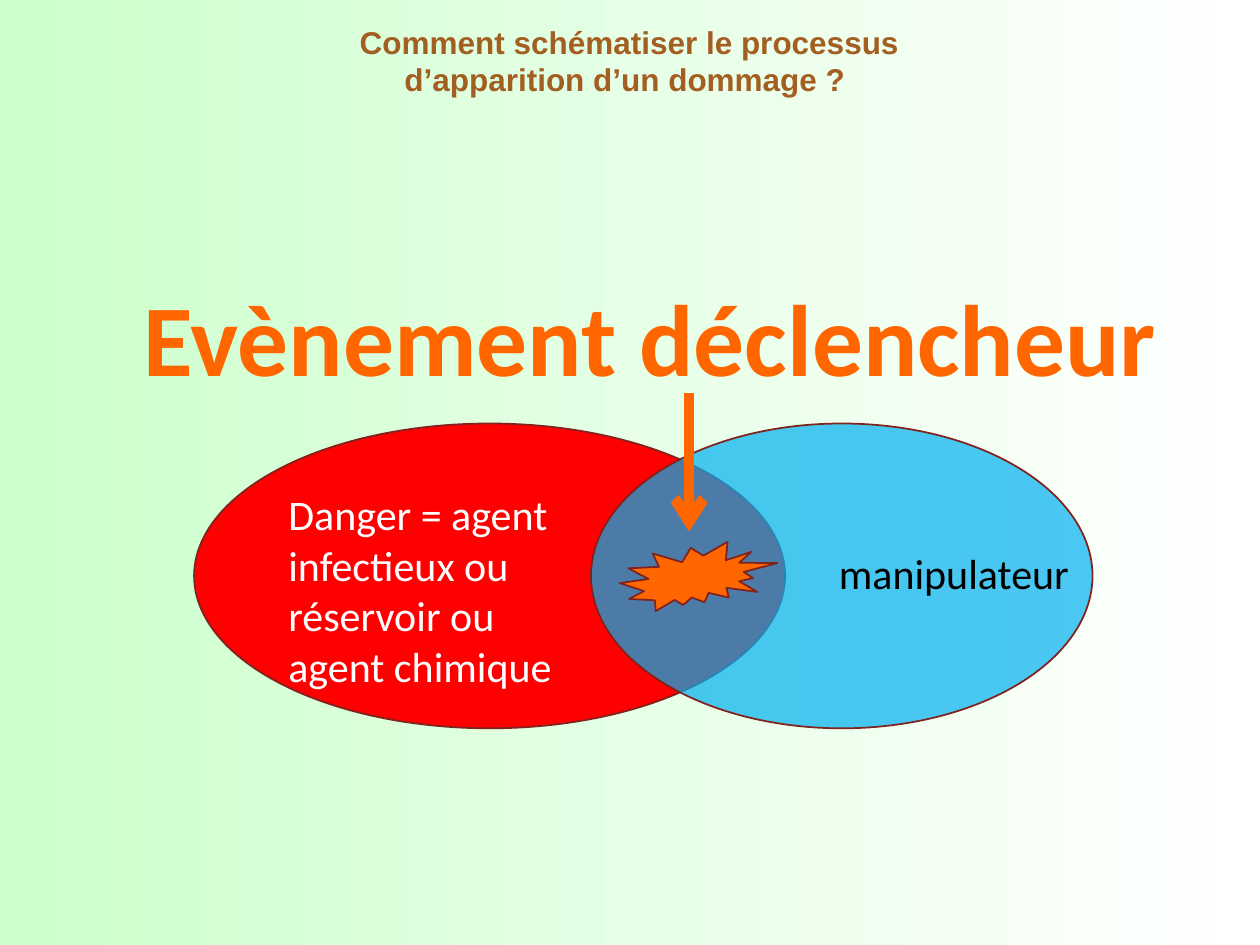
from dataclasses import dataclass

from lxml.etree import SubElement
from pptx import Presentation
from pptx.dml.color import RGBColor
from pptx.enum.shapes import MSO_CONNECTOR, MSO_SHAPE
from pptx.enum.text import MSO_ANCHOR, PP_ALIGN
from pptx.oxml.ns import qn
from pptx.util import Pt

COLORS = {
    "mint": "CCFFCC",
    "white": "FFFFFF",
    "black": "000000",
    "red": "FF0000",
    "blue": "00B0F0",
    "orange": "FF6600",
    "outline": "80221D",
    "brown": "A35E21",
}


@dataclass
class Figure:
    preset: MSO_SHAPE
    left: float
    top: float
    width: float
    height: float
    color: str
    opacity: int = 100


@dataclass
class Label:
    text: str
    left: float
    top: float
    width: float
    height: float
    size: float
    color: str
    font: str = "Calibri"
    bold: bool = False
    align: PP_ALIGN = PP_ALIGN.LEFT
    anchor: MSO_ANCHOR = MSO_ANCHOR.TOP


def rgb(name: str) -> RGBColor:
    return RGBColor.from_string(COLORS[name])


def paint_background(page) -> None:
    fill = page.background.fill
    fill.gradient()
    fill.gradient_angle = 0
    for stop, name, position in zip(fill.gradient_stops, ("mint", "white"), (0, 1)):
        stop.color.rgb = rgb(name)
        stop.position = position


def draw_figure(page, figure: Figure) -> None:
    shape = page.shapes.add_shape(
        figure.preset, Pt(figure.left), Pt(figure.top), Pt(figure.width), Pt(figure.height)
    )
    shape.shadow.inherit = False
    shape.fill.solid()
    shape.fill.fore_color.rgb = rgb(figure.color)
    shape.line.color.rgb = rgb("outline")
    shape.line.width = Pt(1)
    if figure.opacity < 100:
        color = shape.fill._xPr.find(qn("a:solidFill"))[0]
        SubElement(color, qn("a:alpha"), val=str(figure.opacity * 1000))


def draw_label(page, label: Label) -> None:
    box = page.shapes.add_textbox(
        Pt(label.left), Pt(label.top), Pt(label.width), Pt(label.height)
    )
    frame = box.text_frame
    frame.word_wrap = True
    frame.vertical_anchor = label.anchor
    para = frame.paragraphs[0]
    para.alignment = label.align
    span = para.add_run()
    span.text = label.text
    span.font.name = label.font
    span.font.size = Pt(label.size)
    span.font.bold = label.bold
    span.font.color.rgb = rgb(label.color)


def draw_down_arrow(page, x: float, top: float, bottom: float) -> None:
    arrow = page.shapes.add_connector(
        MSO_CONNECTOR.STRAIGHT, Pt(x), Pt(top), Pt(x), Pt(bottom)
    )
    arrow.line.color.rgb = rgb("orange")
    arrow.line.width = Pt(6)
    SubElement(arrow.line._get_or_add_ln(), qn("a:tailEnd"), type="arrow")
    SubElement(arrow._element.spPr, qn("a:effectLst"))


DANGER = Figure(MSO_SHAPE.OVAL, 110.9, 242, 337.7, 174.2, "red")
HANDLER = Figure(MSO_SHAPE.OVAL, 337.7, 242, 286.6, 174.2, "blue", opacity=70)
BURST = Figure(MSO_SHAPE.EXPLOSION2, 354.2, 309.6, 90, 39.6, "orange")

EVENT_TEXT = Label(
    "Evènement déclencheur", 65.5, 90, 612, 140.4, 58, "orange",
    bold=True, align=PP_ALIGN.CENTER, anchor=MSO_ANCHOR.BOTTOM,
)
DANGER_TEXT = Label(
    "Danger = agent infectieux ou réservoir ou agent chimique",
    157.7, 275.8, 185.8, 123.8, 24, "white",
)
HANDLER_TEXT = Label("manipulateur", 472.3, 309.6, 154.1, 36, 24, "black")
QUESTION_TEXT = Label(
    "Comment schématiser le processus d’apparition d’un dommage ? ",
    167, 9.4, 385.2, 51.1, 18, "brown",
    font="Arial", bold=True, align=PP_ALIGN.CENTER,
)


def main() -> None:
    deck = Presentation()
    deck.slide_width, deck.slide_height = Pt(720), Pt(540)
    page = deck.slides.add_slide(deck.slide_layouts[6])
    paint_background(page)
    draw_figure(page, DANGER)
    draw_label(page, EVENT_TEXT)
    draw_label(page, DANGER_TEXT)
    draw_figure(page, HANDLER)
    draw_label(page, HANDLER_TEXT)
    draw_figure(page, BURST)
    draw_down_arrow(page, 393.8, 224.6, 303.8)
    draw_label(page, QUESTION_TEXT)
    deck.save("out.pptx")


if __name__ == "__main__":
    main()
